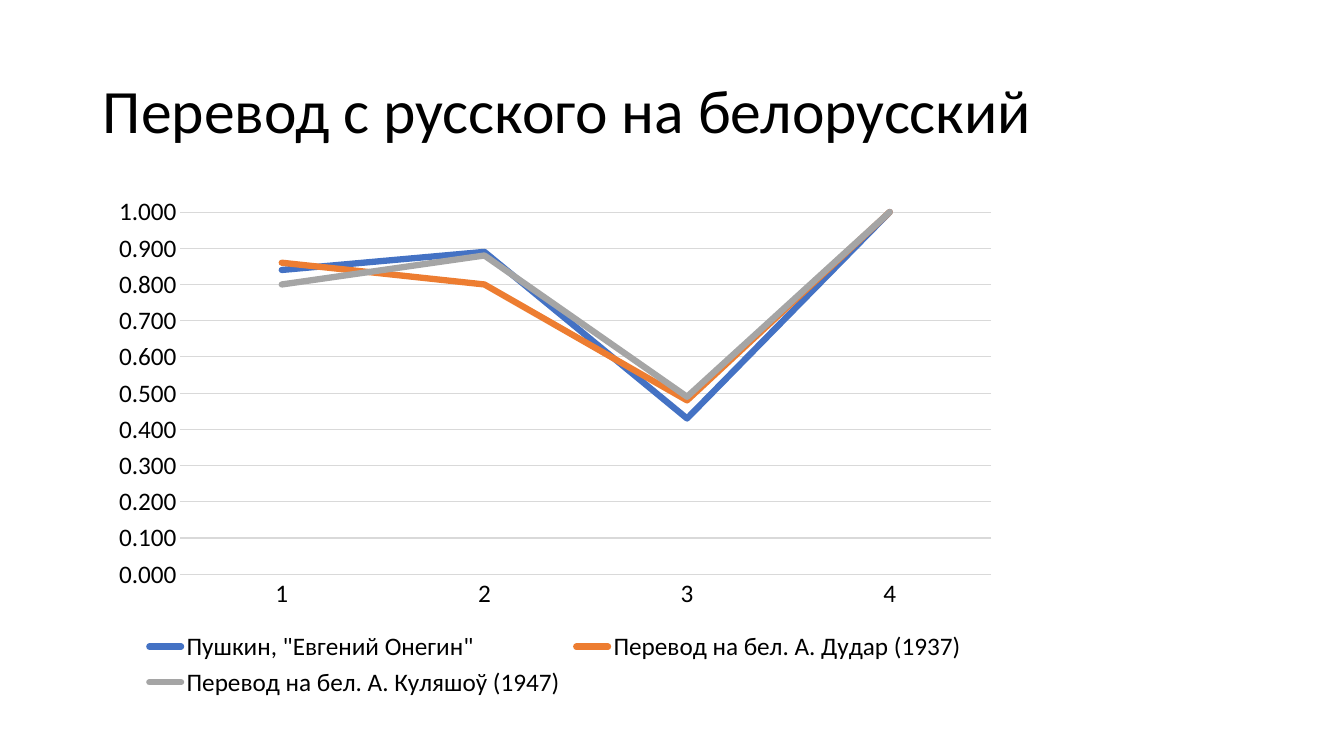
from dataclasses import dataclass

from pptx import Presentation
from pptx.chart.chart import Chart
from pptx.chart.data import CategoryChartData as Data
from pptx.dml.color import RGBColor
from pptx.dml.line import LineFormat
from pptx.enum.chart import XL_CHART_TYPE as Kind
from pptx.enum.chart import XL_LEGEND_POSITION as Side
from pptx.enum.chart import XL_TICK_MARK as Tick
from pptx.enum.text import MSO_ANCHOR as Anchor
from pptx.enum.text import PP_ALIGN as Align
from pptx.oxml.ns import qn
from pptx.slide import Slide
from pptx.text.text import Font
from pptx.util import Inches, Pt

FACE = "Calibri"
BLACK = "000000"
GREY = "D9D9D9"


@dataclass
class Verse:
    name: str
    color: str
    vals: tuple[float, ...]


VERSES = [
    Verse('Пушкин, "Евгений Онегин"', "4472C4", (0.84, 0.89, 0.43, 1)),
    Verse("Перевод на бел. А. Дудар (1937)", "ED7D31", (0.86, 0.8, 0.48, 1)),
    Verse("Перевод на бел. А. Куляшоў (1947)", "A5A5A5", (0.8, 0.88, 0.49, 1)),
]


def paint(color: str) -> RGBColor:
    return RGBColor.from_string(color)


def style(font: Font, size: float) -> None:
    font.name = FACE
    font.size = Pt(size)
    font.bold = False
    font.color.rgb = paint(BLACK)


def stroke(line: LineFormat, color: str, width: float) -> None:
    line.color.rgb = paint(color)
    line.width = Pt(width)


def add_title(slide: Slide, text: str) -> None:
    title = slide.shapes.title
    title.left, title.top = Inches(0.92), Inches(0.4)
    title.width, title.height = Inches(11.5), Inches(1.45)
    frame = title.text_frame
    frame.text = text
    frame.word_wrap = True
    frame.vertical_anchor = Anchor.MIDDLE
    para = frame.paragraphs[0]
    para.alignment = Align.LEFT
    para.line_spacing = 0.9
    style(para.font, 44)


def add_lines(slide: Slide, verses: list[Verse]) -> Chart:
    data = Data(number_format="0.000")
    data.categories = ["1", "2", "3", "4"]
    for verse in verses:
        data.add_series(verse.name, verse.vals)
    chart = slide.shapes.add_chart(
        Kind.LINE, Inches(1), Inches(1.85), Inches(9.01), Inches(5.12), data
    ).chart
    chart.has_title = False
    style(chart.font, 18)
    plot = chart.plots[0]
    plot.vary_by_categories = False
    for verse, series in zip(verses, plot.series):
        series.smooth = False
        stroke(series.format.line, verse.color, 4.5)
        for line in series._element.iter(qn("a:ln")):
            line.set("cap", "rnd")
    return chart


def set_axes(chart: Chart) -> None:
    cats, vals = chart.category_axis, chart.value_axis
    for axis in (cats, vals):
        axis.major_tick_mark = axis.minor_tick_mark = Tick.NONE
        style(axis.tick_labels.font, 18)
    stroke(cats.format.line, GREY, 0.75)
    vals.format.line.fill.background()
    vals.minimum_scale, vals.maximum_scale = 0, 1
    vals.major_unit = 0.1
    vals.has_major_gridlines = True
    stroke(vals.major_gridlines.format.line, GREY, 0.75)
    vals.tick_labels.number_format = "0.000"
    vals.tick_labels.number_format_is_linked = False


def set_legend(chart: Chart) -> None:
    chart.has_legend = True
    chart.legend.position = Side.BOTTOM
    chart.legend.include_in_layout = False
    style(chart.legend.font, 18)


def main() -> None:
    deck = Presentation()
    deck.slide_width, deck.slide_height = Inches(13.33), Inches(7.5)
    slide = deck.slides.add_slide(deck.slide_layouts[5])
    add_title(slide, "Перевод с русского на белорусский")
    chart = add_lines(slide, VERSES)
    set_axes(chart)
    set_legend(chart)
    deck.save("out.pptx")


if __name__ == "__main__":
    main()
